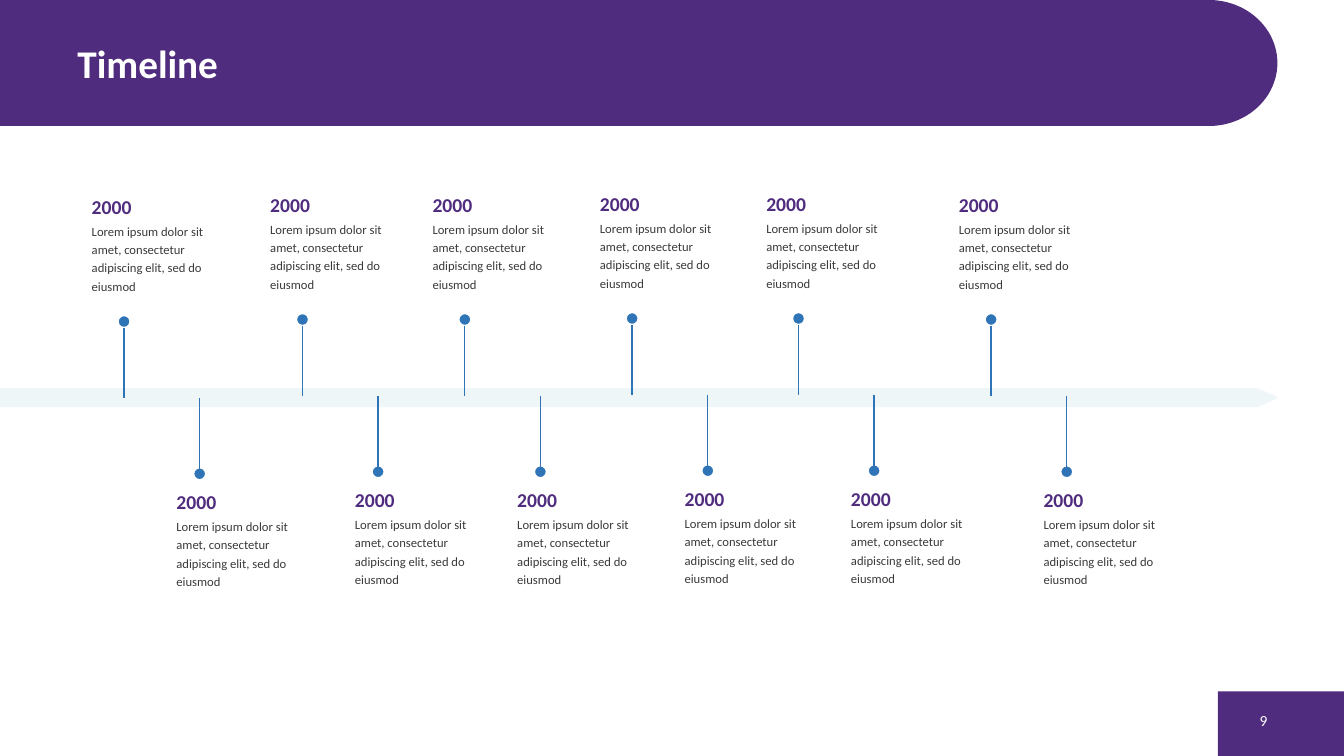
from dataclasses import dataclass

from pptx import Presentation
from pptx.dml.color import RGBColor
from pptx.enum.shapes import MSO_CONNECTOR, MSO_SHAPE
from pptx.enum.text import MSO_ANCHOR, MSO_AUTO_SIZE, PP_ALIGN
from pptx.oxml.ns import qn
from pptx.util import Inches, Pt

RECT = MSO_SHAPE.RECTANGLE
OVAL = MSO_SHAPE.OVAL
LINE = MSO_CONNECTOR.STRAIGHT
MIDDLE = MSO_ANCHOR.MIDDLE
GROW = MSO_AUTO_SIZE.SHAPE_TO_FIT_TEXT
LEFT, RIGHT, JUST = PP_ALIGN.LEFT, PP_ALIGN.RIGHT, PP_ALIGN.JUSTIFY


@dataclass(frozen=True)
class Theme:
    font: str = "Calibri"
    purple: RGBColor = RGBColor(0x50, 0x2C, 0x7F)
    blue: RGBColor = RGBColor(0x2F, 0x74, 0xB7)
    pale: RGBColor = RGBColor(0xEF, 0xF6, 0xF7)
    ink: RGBColor = RGBColor(0x3A, 0x3A, 0x3A)
    white: RGBColor = RGBColor(0xFF, 0xFF, 0xFF)
    title: Pt = Pt(28)
    year: Pt = Pt(14)
    page: Pt = Pt(11)
    note: Pt = Pt(9)
    rule: Pt = Pt(1)


def assign(target, values):
    for key, value in values.items():
        setattr(target, key, value)


class Painter:
    def __init__(self, slide, theme):
        self.shapes = slide.shapes
        self.theme = theme

    def paint(self, shape, fill, edge=None):
        shape.shadow.inherit = False
        shape.fill.solid()
        shape.fill.fore_color.rgb = fill
        if edge is None:
            shape.line.fill.background()
        else:
            shape.line.color.rgb = edge
            shape.line.width = self.theme.rule

    def shape(self, kind, box, fill, edge=None):
        shape = self.shapes.add_shape(kind, *map(Inches, box))
        self.paint(shape, fill, edge)

    def outline(self, points, fill):
        points = [(Inches(x), Inches(y)) for x, y in points]
        builder = self.shapes.build_freeform(*points[0])
        builder.add_line_segments(points[1:], close=True)
        self.paint(builder.convert_to_shape(), fill)

    def line(self, x, top, end):
        line = self.shapes.add_connector(
            LINE, Inches(x), Inches(top), Inches(x), Inches(end))
        line.line.color.rgb = self.theme.blue
        line.line.width = self.theme.rule
        props = line._element.spPr
        props.append(props.makeelement(qn("a:effectLst"), {}))

    def text(self, words, box, color, frame, para, font):
        shape = self.shapes.add_textbox(*map(Inches, box))
        block = shape.text_frame
        assign(block, {"word_wrap": True, **frame})
        first = block.paragraphs[0]
        first.text = words
        assign(first, para)
        for face in (first.font, first.runs[0].font):
            assign(face, {"name": self.theme.font, **font})
            face.color.rgb = color

    def event(self, year, note, x, y):
        theme = self.theme
        frame = {"auto_size": GROW, "margin_left": 0, "margin_right": 0,
                 "margin_top": 0, "margin_bottom": 0}
        self.text(year, (x, y, 1.19, 0.2), theme.purple, frame,
                  {"alignment": JUST, "line_spacing": Pt(14),
                   "space_after": Pt(12)},
                  {"size": theme.year, "bold": True})
        self.text(note, (x, y + 0.22, 1.19, 0.72), theme.ink, frame,
                  {"alignment": LEFT, "line_spacing": Pt(13),
                   "space_after": Pt(12)},
                  {"size": theme.note})

    def marker(self, x, dot, top, end):
        self.shape(OVAL, (x - 0.06, dot, 0.12, 0.12),
                   self.theme.blue, self.theme.white)
        self.line(x, top, end)


def main():
    deck = Presentation()
    deck.slide_width, deck.slide_height = Inches(13.33), Inches(7.5)
    theme = Theme()
    slide = deck.slides.add_slide(deck.slide_layouts[6])
    painter = Painter(slide, theme)

    painter.shape(RECT, (12.08, 6.86, 1.25, 0.64), theme.purple)
    painter.shape(RECT, (0, 0, 11.99, 1.25), theme.purple)
    painter.shape(OVAL, (11.31, 0, 1.36, 1.25), theme.purple)
    painter.text("Timeline", (0.67, 0.08, 10, 1.08), theme.white,
                 {"vertical_anchor": MIDDLE}, {"alignment": LEFT},
                 {"size": theme.title, "bold": True})
    painter.text("9", (12.17, 6.95, 0.5, 0.4), theme.white,
                 {"vertical_anchor": MIDDLE}, {"alignment": RIGHT},
                 {"size": theme.page})
    painter.outline([(0, 4.04), (12.47, 4.04), (12.65, 3.96), (12.67, 3.95),
                     (12.65, 3.93), (12.47, 3.85), (0, 3.85)], theme.pale)

    year = "2000"
    note = ("Lorem ipsum dolor sit amet, consectetur adipiscing elit, "
            "sed do eiusmod")
    pairs = [(0.91, 1.97), (2.68, 1.95), (4.29, 1.95),
             (5.95, 1.94), (7.6, 1.94), (9.51, 1.95)]
    for x, y in pairs:
        axis = y + 1.98
        painter.marker(x + 0.32, axis - 0.82, axis - 0.7, axis)
        painter.event(year, note, x, y)
        painter.marker(x + 1.07, axis + 0.69, axis + 0.7, axis)
        painter.event(year, note, x + 0.84, y + 2.93)

    deck.save("out.pptx")


if __name__ == "__main__":
    main()
